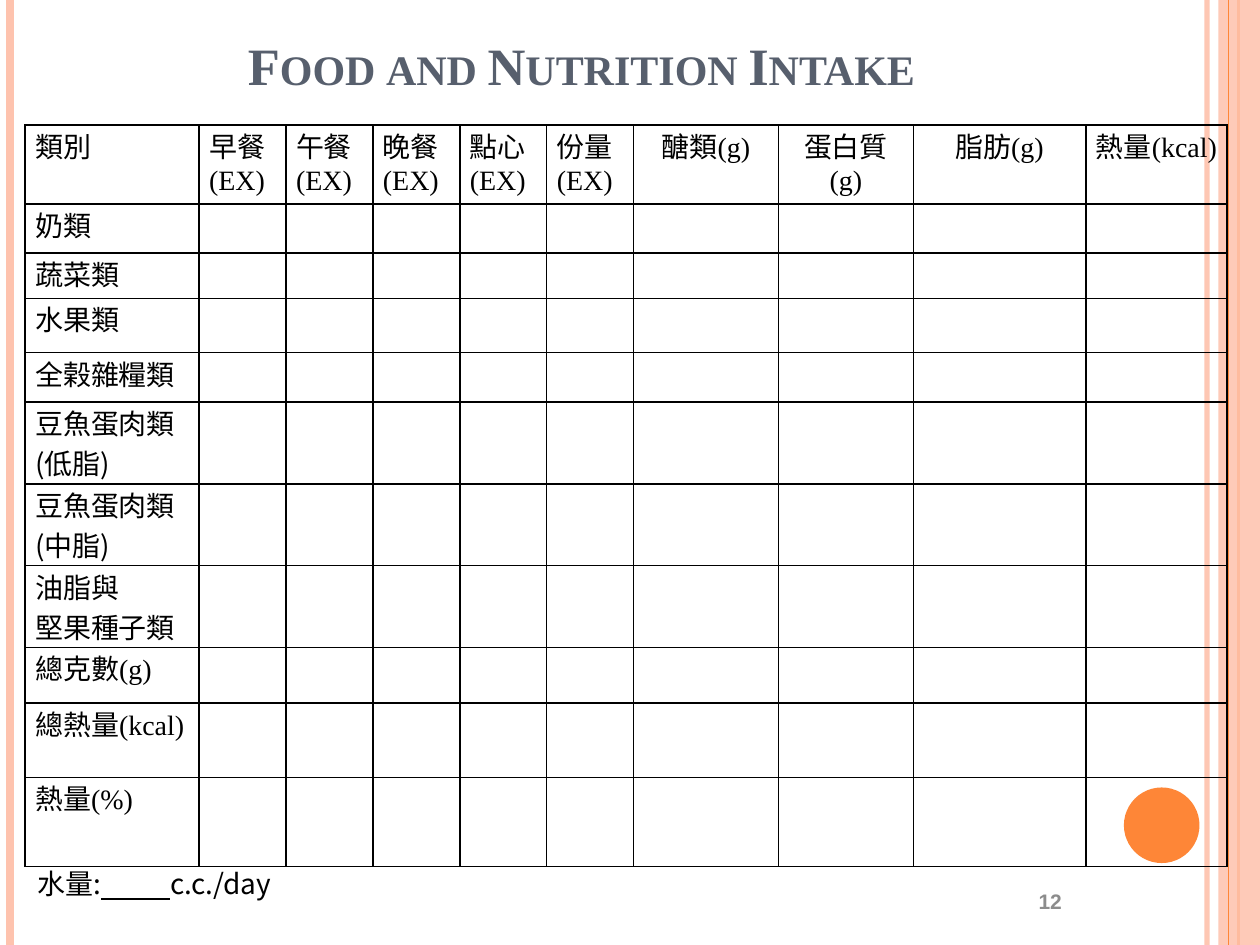
from dataclasses import dataclass

from lxml import etree
from pptx import Presentation
from pptx import util as u
from pptx.dml.color import RGBColor
from pptx.enum import shapes, text
from pptx.oxml.ns import qn

Inches, Pt = u.Inches, u.Pt
LEFT, CENTER = text.PP_ALIGN.LEFT, text.PP_ALIGN.CENTER
TOP, MIDDLE = text.MSO_ANCHOR.TOP, text.MSO_ANCHOR.MIDDLE


@dataclass(frozen=True)
class Theme:
    orange: str = "FE8637"
    peach: str = "FEC3AE"
    slate: str = "575F6D"
    gray: str = "8C8C8C"
    black: str = "000000"
    serif: str = "Times New Roman"
    sans: str = "Arial"
    chinese: str = "Noto Sans CJK SC"
    title_size: int = 30
    body_size: int = 16
    number_size: int = 12


class SlideBuilder:
    def __init__(self, slide, theme):
        self.slide = slide
        self.theme = theme

    def set_alpha(self, fill_parent, percent):
        color = fill_parent.find(".//" + qn("a:srgbClr"))
        etree.SubElement(color, qn("a:alpha"), val=str(percent * 1000))

    def stripe(self, x, color, width, alpha=100):
        """Vertical line over the full slide height."""
        line = self.slide.shapes.add_connector(
            shapes.MSO_CONNECTOR.STRAIGHT, Inches(x), 0, Inches(x), Inches(7.5))
        line.line.color.rgb = RGBColor.from_string(color)
        line.line.width = Pt(width)
        properties = line.element.spPr
        if alpha < 100:
            self.set_alpha(properties, alpha)
        etree.SubElement(properties, qn("a:effectLst"))

    def shape(self, kind, box, color, alpha=100):
        shape = self.slide.shapes.add_shape(kind, *map(Inches, box))
        shape.shadow.inherit = False
        shape.fill.solid()
        shape.fill.fore_color.rgb = RGBColor.from_string(color)
        shape.line.fill.background()
        if alpha < 100:
            self.set_alpha(shape.element.spPr, alpha)

    def run(self, paragraph, words, font, size, color, small_caps=False, **format_values):
        """Latin letters take the given font, Chinese ones the theme's Chinese font."""
        run = paragraph.add_run()
        run.text = words
        values = {"name": font, "size": Pt(size), **format_values}
        for name, value in values.items():
            setattr(run.font, name, value)
        run.font.color.rgb = RGBColor.from_string(color)
        properties = run.font._element
        if small_caps:
            properties.set("cap", "small")
        latin = properties.find(qn("a:latin"))
        latin.addnext(etree.Element(qn("a:ea"), typeface=self.theme.chinese))

    def text_box(self, box, runs, font, size, color, align=LEFT, anchor=TOP, **format_values):
        """Runs are pairs of words and their own format values."""
        frame = self.slide.shapes.add_textbox(*map(Inches, box)).text_frame
        frame.word_wrap = True
        frame.vertical_anchor = anchor
        paragraph = frame.paragraphs[0]
        paragraph.alignment = align
        for words, own_values in runs:
            self.run(paragraph, words, font, size, color, **format_values, **own_values)

    def cell(self, cell, words, font, align):
        for side, margin in {"left": 0.08, "right": 0.08, "top": 0, "bottom": 0}.items():
            setattr(cell, f"margin_{side}", Inches(margin))
        for index, line in enumerate(words.split("\n")):
            frame = cell.text_frame
            paragraph = frame.add_paragraph() if index else frame.paragraphs[0]
            paragraph.alignment = align
            self.run(paragraph, line, font, self.theme.body_size, self.theme.black)
        properties = cell._tc.get_or_add_tcPr()
        for side in ("lnL", "lnR", "lnT", "lnB"):
            border = etree.SubElement(properties, qn(f"a:{side}"), w=str(Pt(1)))
            fill = etree.SubElement(border, qn("a:solidFill"))
            etree.SubElement(fill, qn("a:srgbClr"), val=self.theme.black)
        cell.fill.background()

    def table(self, left, top, widths, heights, headers, categories, centered_from):
        box = (left, top, sum(widths), sum(heights))
        frame = self.slide.shapes.add_table(len(heights), len(widths), *map(Inches, box))
        table = frame.table
        table.first_row = table.horz_banding = False
        for column, width in zip(table.columns, widths):
            column.width = Inches(width)
        for row, height in zip(table.rows, heights):
            row.height = Inches(height)
        for index, words in enumerate(headers):
            align = CENTER if index >= centered_from else LEFT
            self.cell(table.cell(0, index), words, self.theme.serif, align)
        for row, (words, font) in enumerate(categories, start=1):
            for column in range(len(widths)):
                self.cell(table.cell(row, column), "" if column else words, font, LEFT)


def main():
    theme = Theme()
    presentation = Presentation()
    presentation.slide_width, presentation.slide_height = Inches(10), Inches(7.5)
    slide = presentation.slides.add_slide(presentation.slide_layouts[6])
    builder = SlideBuilder(slide, theme)

    builder.stripe(9.58, theme.peach, 3, alpha=93)
    builder.stripe(0.08, theme.peach, 4.5)
    builder.stripe(9.83, theme.orange, 1.5)
    builder.shape(shapes.MSO_SHAPE.RECTANGLE, (9.67, 0, 0.33, 7.5), theme.peach, alpha=87)
    builder.stripe(9.75, theme.orange, 0.75)
    builder.shape(shapes.MSO_SHAPE.OVAL, (8.92, 6.25, 0.6, 0.6), theme.orange)

    builder.text_box((7.17, 6.95, 2.33, 0.4), [("12", {})], theme.sans, theme.number_size,
                     theme.gray, CENTER, MIDDLE, bold=True)
    builder.text_box((1, -0.11, 7.23, 1.25), [("Food and Nutrition Intake", {})], theme.serif,
                     theme.title_size, theme.slate, CENTER, MIDDLE, bold=True, small_caps=True)

    headers = ["類別", "早餐\n(EX)", "午餐(EX)", "晚餐(EX)", "點心\n(EX)", "份量(EX)",
               "醣類(g)", "蛋白質(g)", "脂肪(g)", "熱量(kcal)"]
    categories = [
        ("奶類", theme.serif), ("蔬菜類", theme.serif), ("水果類", theme.serif),
        ("全榖雜糧類", theme.chinese), ("豆魚蛋肉類(低脂)", theme.chinese),
        ("豆魚蛋肉類\n(中脂)", theme.chinese), ("油脂與\n堅果種子類", theme.chinese),
        ("總克數(g)", theme.serif), ("總熱量(kcal)", theme.serif), ("熱量(%)", theme.serif),
    ]
    builder.table(
        0.2, 0.99,
        widths=[1.38] + [0.69] * 5 + [1.15, 1.07, 1.37, 1.12],
        heights=[0.63, 0.39, 0.36, 0.43, 0.39] + [0.65] * 3 + [0.44, 0.59, 0.71],
        headers=headers, categories=categories, centered_from=6)

    water = [("水量:", {}), (" " * 11, {"underline": True}), ("c.c./day", {})]
    builder.text_box((0.2, 6.83, 2.91, 0.37), water, theme.chinese, theme.body_size, theme.black)

    presentation.save("out.pptx")


if __name__ == "__main__":
    main()
